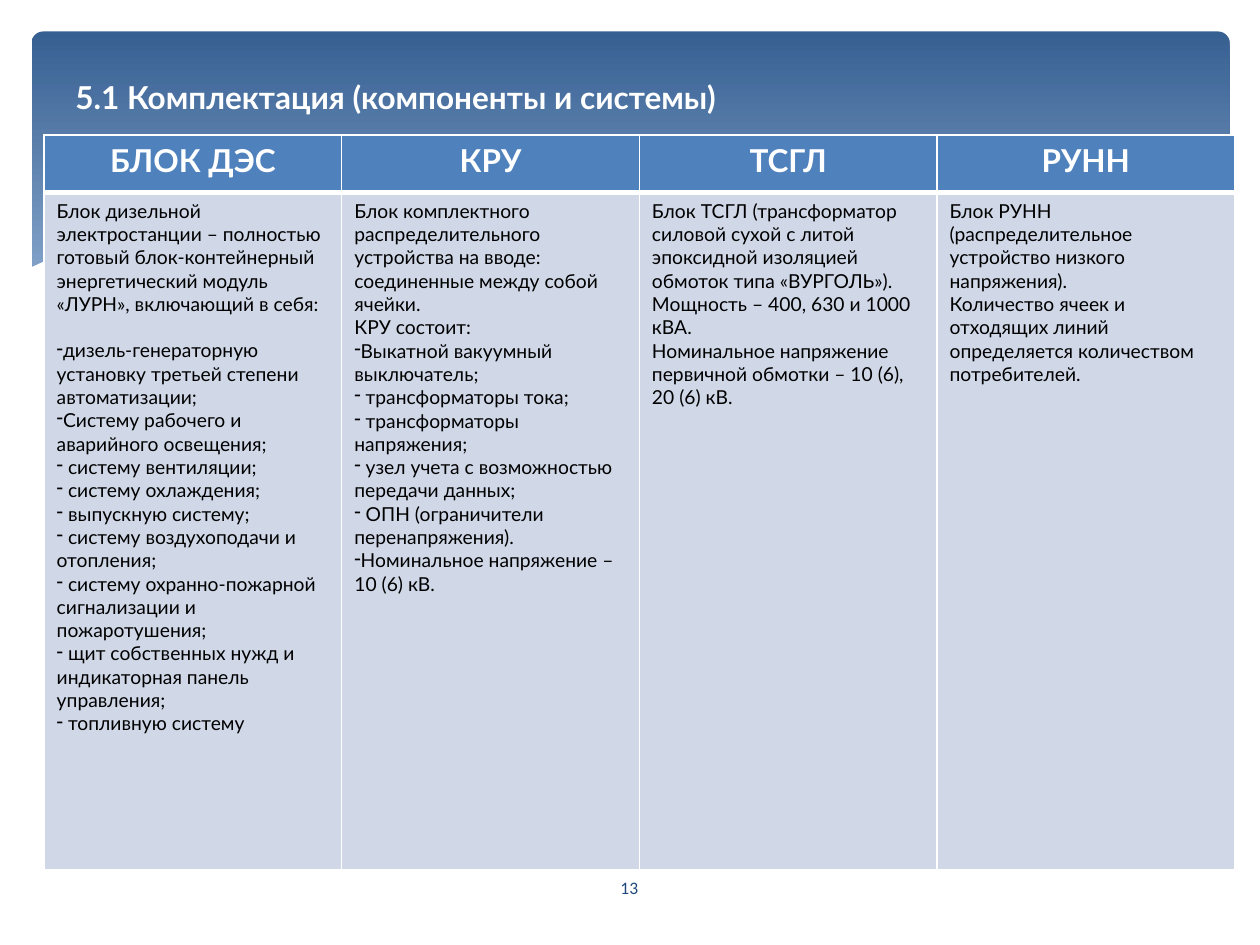
from dataclasses import dataclass

from lxml import etree
from pptx import Presentation
from pptx import util as u
from pptx.dml.color import RGBColor
from pptx.enum import shapes, text
from pptx.oxml.ns import qn


@dataclass(frozen=True)
class Theme:
    band_top: str = "376092"
    band_bottom: str = "95B3D7"
    header: str = "4F81BD"
    cell: str = "D0D8E8"
    white: str = "FFFFFF"
    black: str = "000000"
    number: str = "1F497D"
    font: str = "Lato"
    number_font: str = "Calibri"
    heading_size: int = 18
    body_size: int = 11
    number_size: int = 10


T = Theme()
LEFT, CENTER = text.PP_ALIGN.LEFT, text.PP_ALIGN.CENTER
HEADING = dict(name=T.font, size=u.Pt(T.heading_size), bold=True, color=T.white)
BODY = dict(name=T.font, size=u.Pt(T.body_size), bold=False, color=T.black)
NUMBER = dict(name=T.number_font, size=u.Pt(T.number_size), bold=False, color=T.number)

# Column heading, introductory paragraphs, bulleted paragraphs
COLUMNS = [
    ("БЛОК ДЭС",
     ["Блок дизельной электростанции – полностью готовый блок-контейнерный "
      "энергетический модуль «ЛУРН», включающий в себя:"],
     ["дизель-генераторную установку третьей степени автоматизации;",
      "Систему рабочего и аварийного освещения;",
      " систему вентиляции;",
      " систему охлаждения;",
      " выпускную систему;",
      " систему воздухоподачи и отопления;",
      " систему охранно-пожарной сигнализации и пожаротушения;",
      " щит собственных нужд и индикаторная панель управления;",
      " топливную систему"]),
    ("КРУ",
     ["Блок комплектного распределительного устройства на вводе: "
      "соединенные между собой ячейки.",
      "КРУ состоит:"],
     ["Выкатной вакуумный выключатель;",
      " трансформаторы тока;",
      " трансформаторы напряжения;",
      " узел учета с возможностью передачи данных;",
      " ОПН (ограничители перенапряжения).",
      "Номинальное напряжение – 10 (6) кВ."]),
    ("ТСГЛ",
     ["Блок ТСГЛ (трансформатор силовой сухой с литой эпоксидной изоляцией "
      "обмоток типа «ВУРГОЛЬ»).",
      "Мощность – 400, 630 и 1000 кВА.",
      "Номинальное напряжение первичной обмотки – 10 (6), 20 (6) кВ."],
     []),
    ("РУНН",
     ["Блок РУНН (распределительное устройство низкого напряжения).",
      "Количество ячеек и отходящих линий определяется количеством потребителей."],
     []),
]

# Upper edge of the white wave, as inches from the wave box's corner
WAVE = [(0, 0.29), (0.13, 0.23), (0.29, 0.17), (0.53, 0.11), (0.83, 0.05),
        (1.23, 0.01), (1.7, 0), (2.27, 0.02), (2.93, 0.1), (3.68, 0.23),
        (4.52, 0.43), (5.32, 0.61), (6.03, 0.74), (6.65, 0.84), (7.21, 0.9),
        (7.7, 0.92), (8.14, 0.92), (8.52, 0.89), (8.87, 0.83), (9.17, 0.75),
        (9.54, 0.62)]


def color(value):
    return RGBColor.from_string(value)


def write(p, words, style, align=LEFT):
    p.alignment = align
    r = p.add_run()
    r.text = words
    for key, value in style.items():
        if key == "color":
            r.font.color.rgb = color(value)
        else:
            setattr(r.font, key, value)


def add_bullet(p):
    pPr = p._p.get_or_add_pPr()
    pPr.set("marL", "0")
    pPr.set("indent", "0")
    etree.SubElement(pPr, qn("a:buFontTx"))
    etree.SubElement(pPr, qn("a:buChar"), char="-")


def add_text(s, box, words, style, align, **frame):
    tf = s.shapes.add_textbox(*map(u.Inches, box)).text_frame
    tf.word_wrap = True
    for key, value in frame.items():
        setattr(tf, key, value)
    write(tf.paragraphs[0], words, style, align)


def style_cell(cell, fill, bottom=1):
    tcPr = cell._tc.get_or_add_tcPr()
    for side, width in dict(L=1, R=1, T=1, B=bottom).items():
        ln = etree.SubElement(tcPr, qn(f"a:ln{side}"), w=str(u.Pt(width)))
        solid = etree.SubElement(ln, qn("a:solidFill"))
        etree.SubElement(solid, qn("a:srgbClr"), val=T.white)
    cell.fill.solid()
    cell.fill.fore_color.rgb = color(fill)


def add_band(s, box):
    sp = s.shapes.add_shape(shapes.MSO_SHAPE.ROUNDED_RECTANGLE, *map(u.Inches, box))
    sp.adjustments[0] = 0.034
    sp.shadow.inherit = False
    sp.line.fill.background()
    sp.fill.gradient()
    sp.fill.gradient_angle = 270
    stops = ((0, T.band_top), (0.9, T.band_bottom))
    for stop, (position, value) in zip(sp.fill.gradient_stops, stops):
        stop.position = position
        stop.color.rgb = color(value)


def add_wave(s, box):
    x, y, w, h = box
    outline = [(x + dx, y + dy) for dx, dy in WAVE] + [(x + w, y + h), (x, y + h)]
    points = [(u.Inches(px), u.Inches(py)) for px, py in outline]
    builder = s.shapes.build_freeform(*points[0])
    builder.add_line_segments(points[1:], close=True)
    sp = builder.convert_to_shape()
    sp.shadow.inherit = False
    sp.line.fill.background()
    sp.fill.solid()
    sp.fill.fore_color.rgb = color(T.white)


def add_components(s, box, header_height):
    table = s.shapes.add_table(2, len(COLUMNS), *map(u.Inches, box)).table
    table.horz_banding = False
    table.rows[0].height = u.Inches(header_height)
    table.rows[1].height = u.Inches(box[3] - header_height)
    for i, (heading, intro, items) in enumerate(COLUMNS):
        table.columns[i].width = u.Inches(box[2] / len(COLUMNS))
        head, body = table.cell(0, i), table.cell(1, i)
        style_cell(head, T.header, bottom=3)
        style_cell(body, T.cell)
        write(head.text_frame.paragraphs[0], heading, HEADING, CENTER)
        tf = body.text_frame
        for n, words in enumerate(intro + items):
            p = tf.add_paragraph() if n else tf.paragraphs[0]
            write(p, words, BODY)
            if n >= len(intro):
                add_bullet(p)
    # One line of space between the first column's introduction and its list
    table.cell(1, 0).text_frame.paragraphs[0].space_after = u.Pt(13.2)


def main():
    prs = Presentation()
    prs.slide_width, prs.slide_height = u.Inches(10), u.Inches(7.5)
    s = prs.slides.add_slide(prs.slide_layouts[6])

    # Backdrop
    add_band(s, (0.25, 0.25, 9.51, 2.7))
    add_wave(s, (0.23, 1.84, 9.54, 1.45))

    # Title and page number
    add_text(s, (0.5, 0.37, 9, 1.37), "5.1 Комплектация (компоненты и системы)",
             HEADING, LEFT, margin_top=u.Inches(0.25))
    add_text(s, (4.36, 6.84, 1.27, 0.4), "13", NUMBER, CENTER,
             vertical_anchor=text.MSO_ANCHOR.MIDDLE)

    # Components table
    add_components(s, (0.35, 1.07, 9.45, 5.83), 0.46)

    prs.save("out.pptx")


if __name__ == "__main__":
    main()
